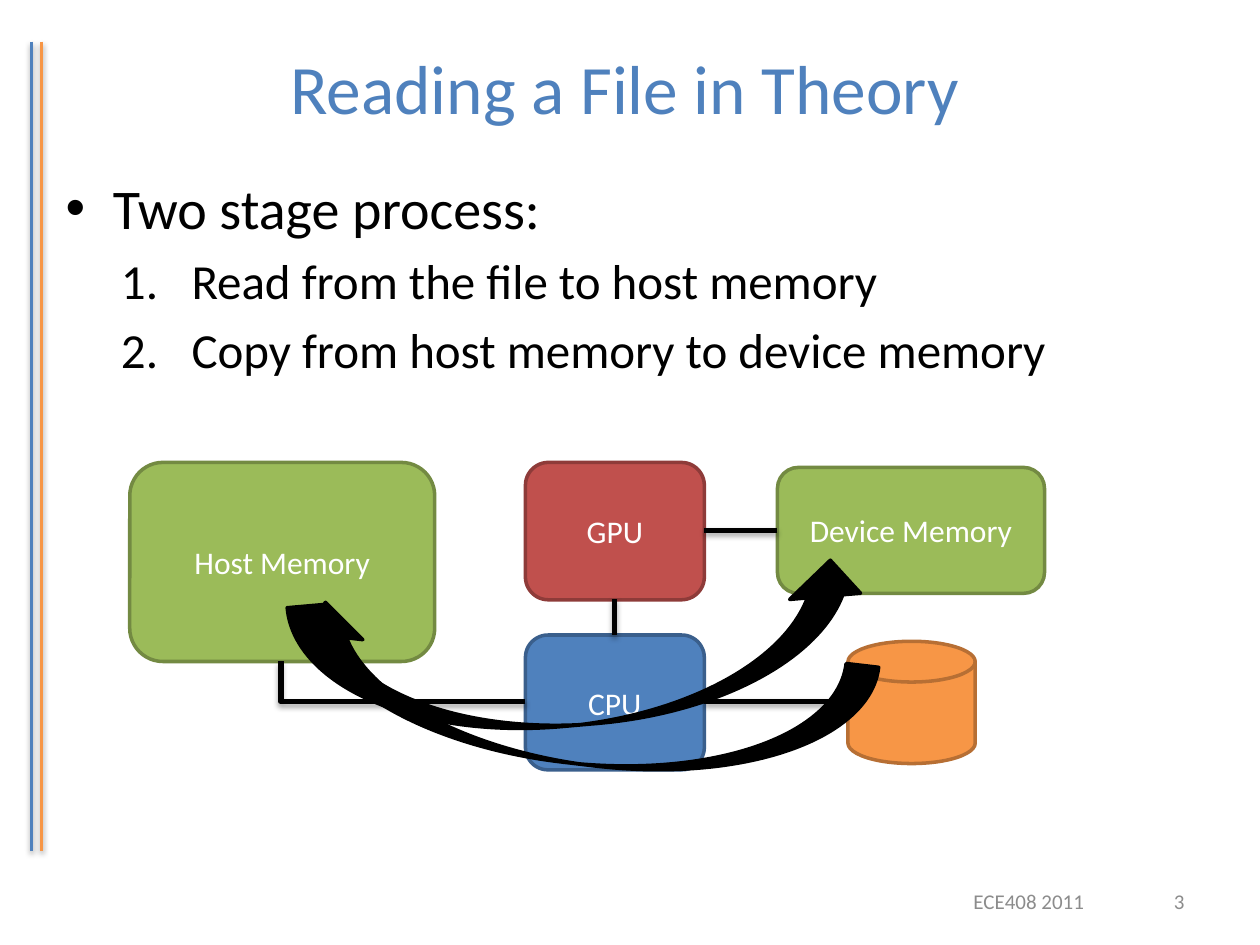
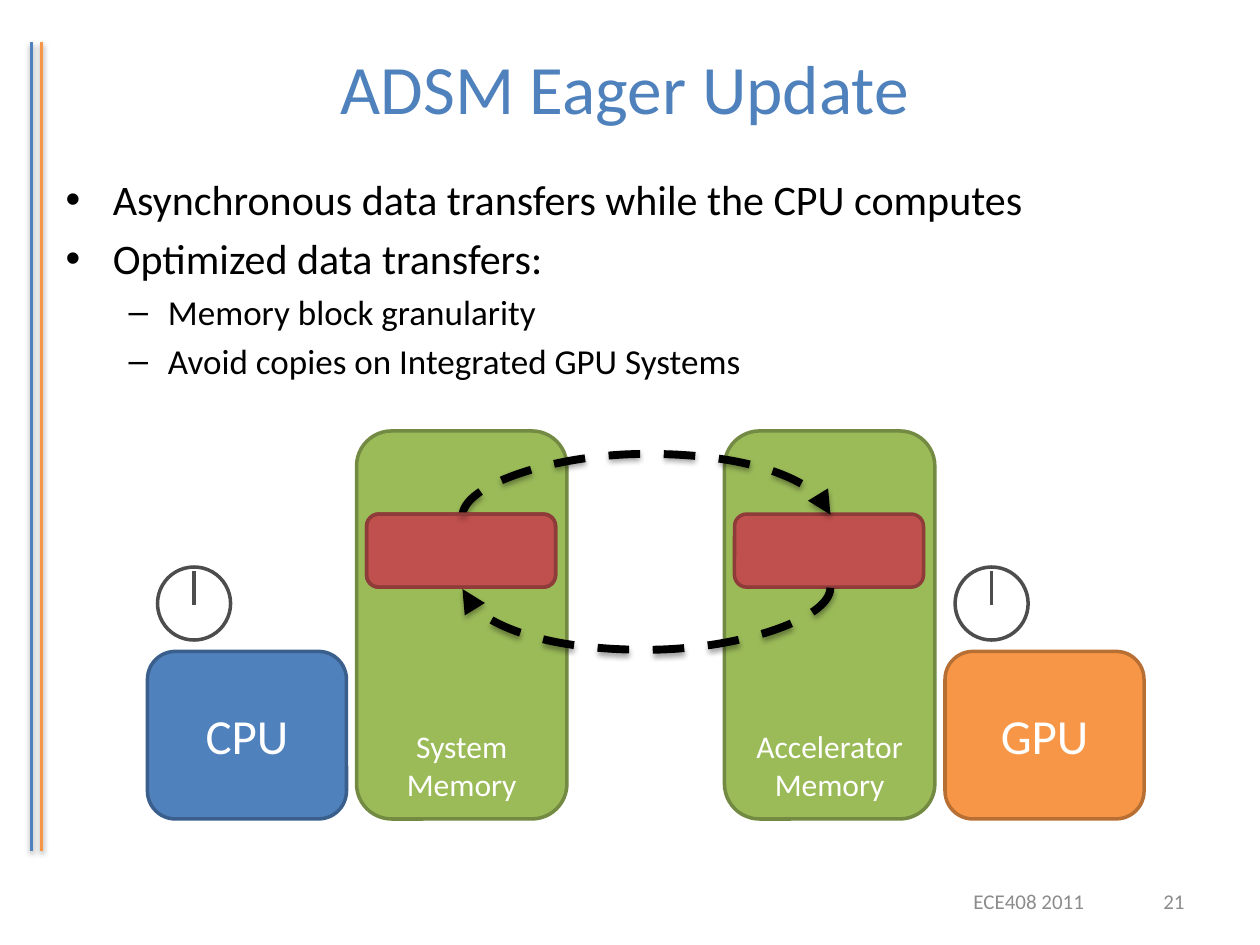
from lxml import etree
from pptx import Presentation
from pptx.dml.color import RGBColor
from pptx.enum.dml import MSO_LINE
from pptx.enum.shapes import MSO_CONNECTOR, MSO_SHAPE
from pptx.enum.text import MSO_ANCHOR, MSO_AUTO_SIZE, PP_ALIGN
from pptx.oxml.ns import qn
from pptx.util import Inches, Pt

FONT = "Calibri"
BLUE, RED, GREEN, ORANGE = "4F81BD", "C0504D", "9BBB59", "F79646"
BLACK, WHITE, GRAY, DARK = "000000", "FFFFFF", "8C8C8C", "4D4D4D"
EDGES = {BLUE: "3A5F8C", RED: "8E3B39", GREEN: "738A42", ORANGE: "B76F34", BLACK: BLACK}


def rgb(color):
    return RGBColor.from_string(color)


def add_text(p, text, size=18, color=BLACK, align=None):
    if align is not None:
        p.alignment = align
    r = p.add_run()
    r.text = text
    r.font.name = FONT
    r.font.size = Pt(size)
    r.font.color.rgb = rgb(color)


def add_node(parent, tag, **attrs):
    node = etree.SubElement(parent, qn(tag))
    for key, value in attrs.items():
        node.set(key, str(value))
    return node


class Deck:
    """Hold the course style and the slide being built."""

    def __init__(self):
        self.prs = Presentation()
        self.prs.slide_width, self.prs.slide_height = Inches(10), Inches(7.5)
        self.slide = None

    def new_slide(self, title, number):
        self.slide = self.prs.slides.add_slide(self.prs.slide_layouts[1])
        for x, color in ((0.25, BLUE), (0.33, ORANGE)):
            self.line(x, 0.33, x, 6.75, color=color, width=2)
        tf = self.placeholder(0, 0.3, 0.78)
        add_text(tf.paragraphs[0], title, size=39.6, color=BLUE, align=PP_ALIGN.CENTER)
        self.label("ECE408 2011", 7.5, 1.33, PP_ALIGN.CENTER)
        self.label(str(number), 8.92, 0.58, PP_ALIGN.RIGHT)

    def placeholder(self, index, y, h):
        sp = self.slide.placeholders[index]
        sp.left, sp.top, sp.width, sp.height = Inches(0.42), Inches(y), Inches(9.08), Inches(h)
        sp.text_frame.auto_size = MSO_AUTO_SIZE.NONE
        return sp.text_frame

    def label(self, text, x, w, align):
        sp = self.slide.shapes.add_textbox(Inches(x), Inches(6.95), Inches(w), Inches(0.4))
        tf = sp.text_frame
        tf.word_wrap = True
        tf.vertical_anchor = MSO_ANCHOR.MIDDLE
        add_text(tf.paragraphs[0], text, size=12, color=GRAY, align=align)

    def body(self, items, sizes, numbered=False):
        tf = self.placeholder(1, 1.33, 5.37)
        for i, (level, text) in enumerate(items):
            p = tf.add_paragraph() if i else tf.paragraphs[0]
            p.level = level
            if i == 0:
                p.space_before = Pt(0)
            if numbered and level:
                pPr = p._p.get_or_add_pPr()
                pPr.set("marL", str(Inches(1)))
                pPr.set("indent", str(Inches(-0.56)))
                add_node(pPr, "a:buFont", typeface=FONT)
                add_node(pPr, "a:buAutoNum", type="arabicPeriod")
            add_text(p, text, size=sizes[level])

    def shape(self, kind, x, y, w, h, fill=None, text="", size=18,
              anchor=MSO_ANCHOR.MIDDLE, rotation=0, flip=False, alpha=None):
        sp = self.slide.shapes.add_shape(kind, Inches(x), Inches(y), Inches(w), Inches(h))
        sp.shadow.inherit = False
        sp.rotation = rotation
        sp.line.color.rgb = rgb(EDGES.get(fill, DARK))
        sp.line.width = Pt(2)
        if fill:
            sp.fill.solid()
            sp.fill.fore_color.rgb = rgb(fill)
        else:
            sp.fill.background()
        if alpha:
            color = sp._element.spPr.find(qn("a:solidFill"))[0]
            add_node(color, "a:alpha", val=alpha * 1000)
        if flip:
            sp._element.spPr.find(qn("a:xfrm")).set("flipH", "1")
        if text:
            tf = sp.text_frame
            tf.word_wrap = True
            tf.vertical_anchor = anchor
            for i, part in enumerate(text.split("\n")):
                p = tf.add_paragraph() if i else tf.paragraphs[0]
                add_text(p, part, size=size, color=WHITE, align=PP_ALIGN.CENTER)

    def box(self, *place, **style):
        self.shape(MSO_SHAPE.ROUNDED_RECTANGLE, *place, **style)

    def line(self, x1, y1, x2, y2, kind=MSO_CONNECTOR.STRAIGHT, color=BLACK, width=3,
             shadow=True, arrow=False):
        cx = self.slide.shapes.add_connector(kind, Inches(x1), Inches(y1), Inches(x2), Inches(y2))
        cx.line.color.rgb = rgb(color)
        cx.line.width = Pt(width)
        if arrow:
            cx.line.dash_style = MSO_LINE.DASH
            add_node(cx.line._get_or_add_ln(), "a:tailEnd", type="triangle")
        spPr = cx._element.spPr
        effects = add_node(spPr, "a:effectLst")
        if shadow:
            outer = add_node(effects, "a:outerShdw", blurRad=Pt(3.1), dist=Pt(1.8),
                             dir=5400000, rotWithShape=0)
            add_node(add_node(outer, "a:srgbClr", val=BLACK), "a:alpha", val=35000)
        return spPr

    def elbow(self, x1, y1, x2, y2):
        spPr = self.line(x1, y1, x2, y2, kind=MSO_CONNECTOR.ELBOW)
        spPr.find(qn("a:prstGeom")).set("prst", "bentConnector2")

    def arc(self, x, y, span, bulge, upward):
        thin = 0.01
        start, end = (x - thin / 2, y - span / 2), (x + thin / 2, y + span / 2)
        if upward:
            start, end = end, start
        spPr = self.line(*start, *end, kind=MSO_CONNECTOR.CURVE, width=4.5, arrow=True)
        spPr.find(qn("a:xfrm")).set("rot", "5400000")
        guides = spPr.find(qn("a:prstGeom")).get_or_add_avLst()
        add_node(guides, "a:gd", name="adj1", fmla=f"val {round(bulge / thin * 100000)}")

    def clock(self, x, y):
        d = 0.58
        self.shape(MSO_SHAPE.OVAL, x, y, d, d)
        self.line(x + d / 2, y + 0.3, x + d / 2, y + 0.03, color=DARK, width=2, shadow=False)


def file_reading(deck):
    deck.new_slide("Reading a File in Theory", 3)
    deck.body([(0, "Two stage process:"),
               (1, "Read from the file to host memory"),
               (1, "Copy from host memory to device memory")], (32, 28), numbered=True)
    deck.box(4.17, 5.04, 1.42, 1.07, fill=BLUE, text="CPU")
    deck.box(4.17, 3.67, 1.42, 1.09, fill=RED, text="GPU")
    deck.box(1.03, 3.67, 2.42, 1.58, fill=GREEN, text="Host Memory")
    deck.line(4.88, 5.04, 4.88, 4.75)
    deck.elbow(4.17, 5.57, 2.23, 5.25)
    deck.box(6.17, 3.71, 2.12, 1, fill=GREEN, text="Device Memory")
    deck.line(5.59, 4.21, 6.17, 4.21)
    deck.shape(MSO_SHAPE.FLOWCHART_MAGNETIC_DISK, 6.73, 5.09, 1.01, 0.97, fill=ORANGE)
    deck.line(5.59, 5.57, 6.73, 5.57)
    arrow = MSO_SHAPE.CURVED_UP_ARROW
    deck.shape(arrow, 2.25, 5.02, 4.68, 1.04, fill=BLACK, rotation=6.7, flip=True)
    deck.shape(arrow, 2.32, 4.62, 4.61, 1.13, fill=BLACK, rotation=355)


def eager_update(deck):
    deck.new_slide("ADSM Eager Update", 21)
    deck.body([(0, "Asynchronous data transfers while the CPU computes"),
               (0, "Optimized data transfers:"),
               (1, "Memory block granularity"),
               (1, "Avoid copies on Integrated GPU Systems")], (24, 20))
    for x, name, color in ((1.17, "CPU", BLUE), (7.5, "GPU", ORANGE)):
        deck.box(x, 5.17, 1.58, 1.33, fill=color, text=name, size=28)
        deck.clock(x + 0.08, 4.5)
    block = (4.08, 1.5, 0.58)
    for x, name in ((2.83, "System"), (5.75, "Accelerator")):
        deck.box(x, 3.42, 1.67, 3.08, fill=GREEN, text=f"{name}\nMemory",
                 anchor=MSO_ANCHOR.BOTTOM)
        deck.box(x + 0.08, *block, fill=RED)
    deck.arc(5.13, 4.09, 2.92, 0.5, upward=True)
    deck.arc(5.13, 4.67, 2.92, 0.5, upward=False)
    deck.box(2.91, *block, fill=RED, alpha=50)


def main():
    deck = Deck()
    file_reading(deck)
    eager_update(deck)
    deck.prs.save("out.pptx")


if __name__ == "__main__":
    main()
